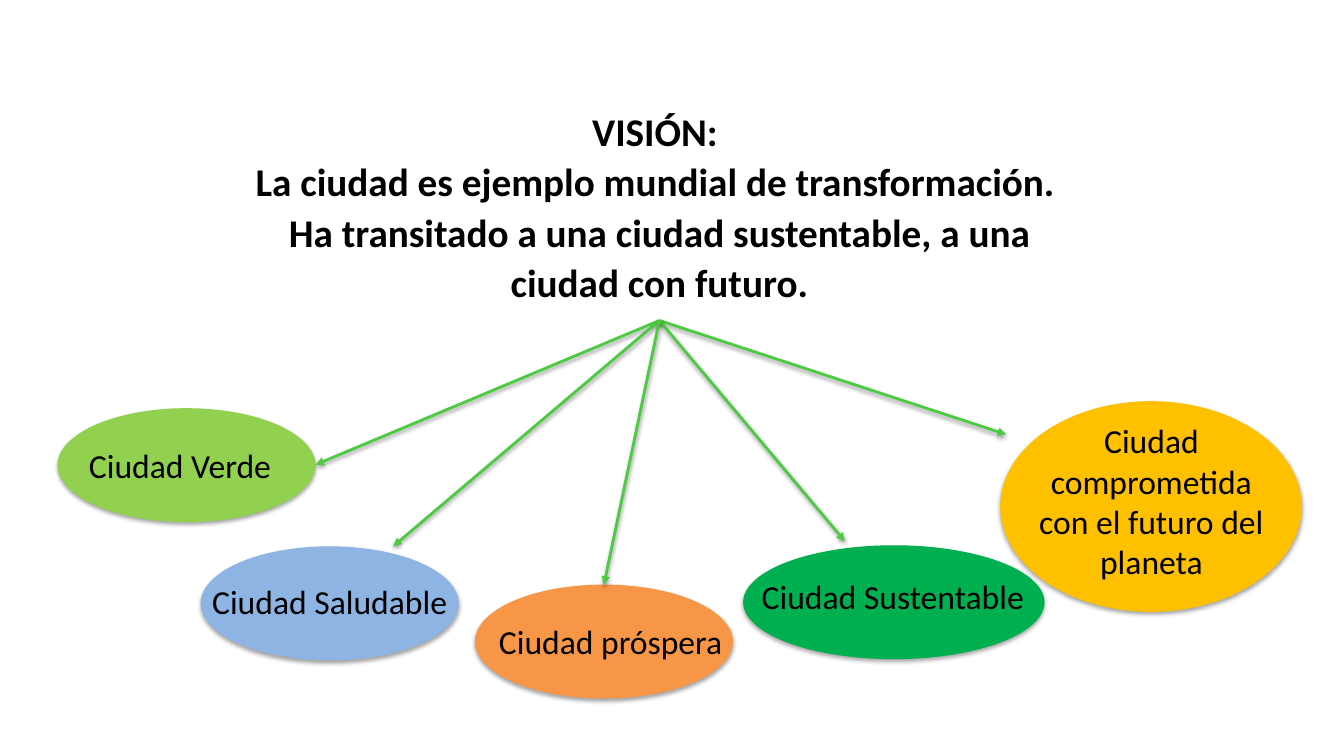
from lxml.etree import SubElement as Sub
from pptx import Presentation
from pptx.dml.color import RGBColor
from pptx.enum.shapes import MSO_CONNECTOR as Conn, MSO_SHAPE as Shape
from pptx.enum.text import MSO_ANCHOR as Anchor, PP_ALIGN as Align
from pptx.oxml.ns import qn
from pptx.util import Inches, Pt

VISION = (
    "VISIÓN: \vLa ciudad es ejemplo mundial de transformación. \v"
    "Ha transitado a una ciudad sustentable, a una ciudad con futuro."
)
GOALS = [
    ("Ciudad comprometida con el futuro del planeta", "FFC000",
     (9.92, 3.98, 2.99, 2.09), (10.19, 4.12, 2.46, 1.72), (9.98, 4.31)),
    ("Ciudad Verde", "92D050",
     (0.57, 4.05, 2.56, 1.13), (0.77, 4.36, 2.03, 0.5), (3.13, 4.61)),
    ("Ciudad Saludable", "8EB4E3",
     (1.99, 5.42, 2.56, 1.13), (1.99, 5.71, 2.56, 0.5), (3.9, 5.42)),
    ("Ciudad Sustentable", "00B050",
     (7.37, 5.41, 2.99, 1.13), (7.44, 5.66, 2.83, 0.5), (8.38, 5.37)),
    ("Ciudad próspera", "F79646",
     (4.71, 5.8, 2.56, 1.13), (4.85, 6.11, 2.44, 0.5), (5.99, 5.8)),
]


def color(code):
    """Turn a hex string into a colour."""
    return RGBColor.from_string(code)


def inches(nums):
    """Turn numbers into lengths."""
    return [Inches(n) for n in nums]


def shade(shape, dist, alpha):
    """Give a shape a soft shadow straight below it."""
    props = shape._element.spPr
    effect = Sub(props, qn("a:effectLst"))
    outer = Sub(effect, qn("a:outerShdw"), blurRad=str(Pt(3.1)),
                dist=str(Pt(dist)), dir="5400000", rotWithShape="0")
    black = Sub(outer, qn("a:srgbClr"), val="000000")
    Sub(black, qn("a:alpha"), val=str(alpha * 1000))


def label(slide, text, box, size=24, bold=False, wrap=True, align=Align.CENTER):
    """Add a text box of one paragraph."""
    shape = slide.shapes.add_textbox(*inches(box))
    frame = shape.text_frame
    frame.word_wrap = wrap
    para = frame.paragraphs[0]
    para.text = text
    para.alignment = align
    para.font.name = "Calibri"
    para.font.size = Pt(size)
    para.font.bold = bold
    para.font.color.rgb = color("000000")
    return shape


def title(slide):
    """Add the vision statement."""
    shape = label(slide, VISION, (2.21, 0.88, 8.66, 2.3), 28, True)
    frame = shape.text_frame
    frame.vertical_anchor = Anchor.MIDDLE
    para = frame.paragraphs[0]
    para.line_spacing = 1.07
    para.space_after = Pt(8)
    return shape


def oval(slide, fill, box):
    """Add a filled ellipse."""
    shape = slide.shapes.add_shape(Shape.OVAL, *inches(box))
    shape.fill.solid()
    shape.fill.fore_color.rgb = color(fill)
    shape.line.fill.background()
    shade(shape, 1.8, 35)


def arrow(slide, start, end):
    """Draw an arrow from the bottom of a box to a point."""
    line = slide.shapes.add_connector(Conn.STRAIGHT, 0, 0, *inches(end))
    line.begin_connect(start, 2)
    line.line.color.rgb = color("4CCA42")
    line.line.width = Pt(2)
    Sub(line._element.spPr.find(qn("a:ln")), qn("a:tailEnd"), type="triangle")
    shade(line, 1.6, 38)


def main():
    """Build and save the slide."""
    deck = Presentation()
    deck.slide_width, deck.slide_height = inches((13.33, 7.5))
    slide = deck.slides.add_slide(deck.slide_layouts[6])
    vision = title(slide)
    for text, fill, box, area, tip in GOALS:
        oval(slide, fill, box)
        align = Align.LEFT if text == "Ciudad próspera" else Align.CENTER
        label(slide, text, area, wrap=area[3] > 0.5, align=align)
        arrow(slide, vision, tip)
    deck.save("out.pptx")


if __name__ == "__main__":
    main()
